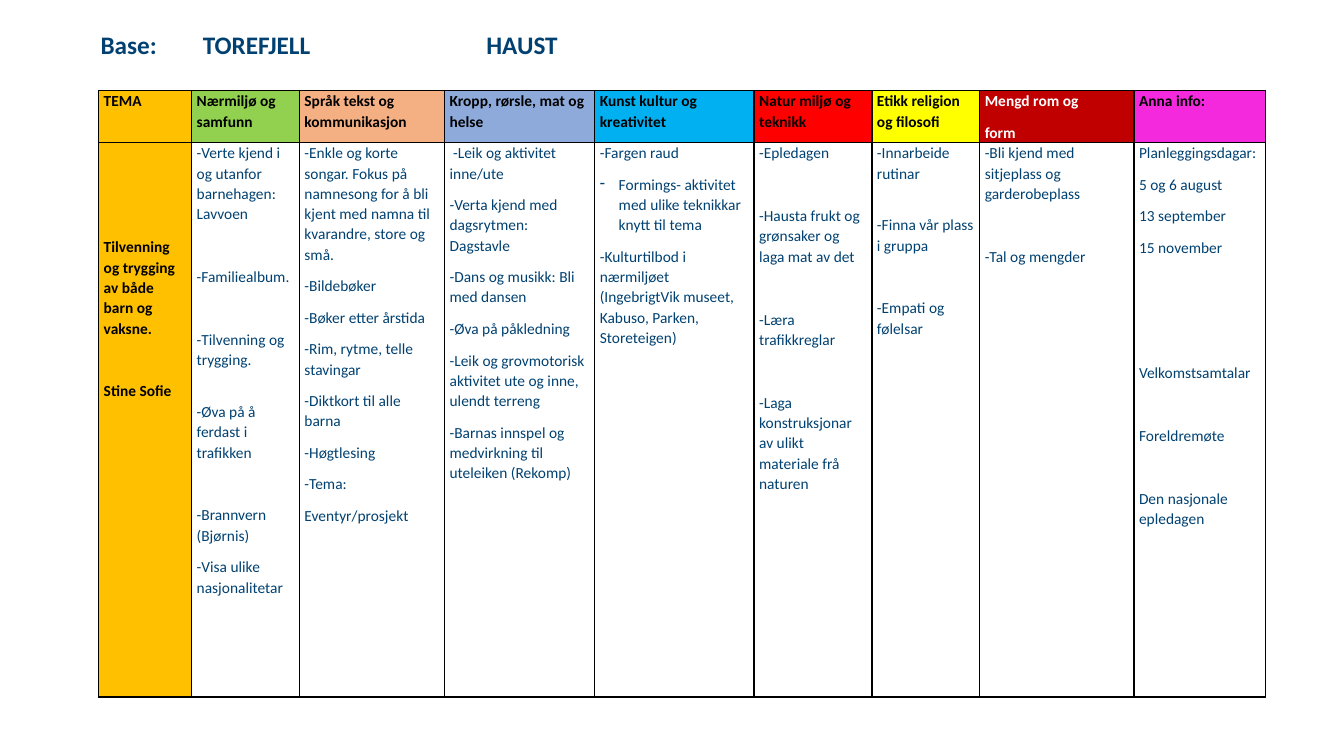
"""Build the autumn plan slide for the Torefjell base."""
from pptx import Presentation, util as u
from pptx.dml.color import RGBColor
from pptx.enum import text
from pptx.oxml.ns import qn
from lxml import etree

FONT = "Calibri"
NAVY = RGBColor(0x00, 0x41, 0x71)
BLACK = RGBColor(0x00, 0x00, 0x00)
WHITE = RGBColor(0xFF, 0xFF, 0xFF)
ORANGE = RGBColor(0xFF, 0xC0, 0x00)
GREEN = RGBColor(0x92, 0xD0, 0x50)
PEACH = RGBColor(0xF4, 0xB0, 0x83)
LAVENDER = RGBColor(0x8E, 0xAA, 0xDB)
BLUE = RGBColor(0x00, 0xB0, 0xF0)
RED = RGBColor(0xFF, 0x00, 0x00)
YELLOW = RGBColor(0xFF, 0xFF, 0x00)
DARK_RED = RGBColor(0xC0, 0x00, 0x00)
MAGENTA = RGBColor(0xF4, 0x28, 0xDC)

LINE = 14.4
GAP = LINE + 8
BULLET = "- "
ROW_HEIGHTS = (37, 396)

COLUMNS = [
    (66.4, ORANGE, ["TEMA"], [
        "Tilvenning og trygging av både barn og vaksne.",
        (GAP, "Stine Sofie")]),
    (77, GREEN, ["Nærmiljø og samfunn"], [
        "-Verte kjend i og utanfor barnehagen: Lavvoen",
        (GAP, "-Familiealbum."),
        (GAP, "-Tilvenning og trygging."),
        (LINE, "-Øva på å ferdast i trafikken"),
        (GAP, "-Brannvern (Bjørnis)"),
        "-Visa ulike nasjonalitetar"]),
    (103.7, PEACH, ["Språk tekst og kommunikasjon"], [
        "-Enkle og korte songar. Fokus på namnesong for å bli kjent med "
        "namna til kvarandre, store og små.",
        "-Bildebøker",
        "-Bøker etter årstida",
        "-Rim, rytme, telle stavingar",
        "-Diktkort til alle barna",
        "-Høgtlesing",
        "-Tema:",
        "Eventyr/prosjekt"]),
    (107.3, LAVENDER, ["Kropp, rørsle, mat og helse"], [
        " -Leik og aktivitet inne/ute",
        "-Verta kjend med dagsrytmen: Dagstavle",
        "-Dans og musikk: Bli med dansen",
        "-Øva på påkledning",
        "-Leik og grovmotorisk aktivitet ute og inne, ulendt terreng",
        "-Barnas innspel og medvirkning til uteleiken (Rekomp)"]),
    (113.8, BLUE, ["Kunst kultur og kreativitet"], [
        "-Fargen raud",
        BULLET + "Formings- aktivitet med ulike teknikkar knytt til tema",
        "-Kulturtilbod i nærmiljøet (IngebrigtVik museet, Kabuso, "
        "Parken, Storeteigen)"]),
    (84.2, RED, ["Natur miljø og teknikk"], [
        "-Epledagen",
        (GAP, "-Hausta frukt og grønsaker og laga mat av det"),
        (GAP, "-Læra trafikkreglar"),
        (GAP, "-Laga konstruksjonar av ulikt materiale frå naturen")]),
    (77, YELLOW, ["Etikk religion og filosofi"], [
        "-Innarbeide rutinar",
        (LINE, "-Finna vår plass i gruppa"),
        (GAP, "-Empati og følelsar")]),
    (110.2, DARK_RED, ["Mengd rom og", "form"], [
        "-Bli kjend med sitjeplass og garderobeplass",
        (GAP, "-Tal og mengder")]),
    (93.9, MAGENTA, ["Anna info:"], [
        "Planleggingsdagar:",
        "5 og 6 august",
        "13 september",
        "15 november",
        (3 * GAP, "Velkomstsamtalar"),
        (GAP, "Foreldremøte"),
        (GAP, "Den nasjonale epledagen")]),
]


def style_font(font, size, color, bold):
    """Apply the slide font with a size, colour and weight."""
    font.name = FONT
    font.size = u.Pt(size)
    font.color.rgb = color
    font.bold = bold


def add_borders(cell):
    """Draw a thin black line on every side of a cell."""
    properties = cell._tc.get_or_add_tcPr()
    for position, side in enumerate(("a:lnL", "a:lnR", "a:lnT", "a:lnB")):
        line = etree.Element(qn(side), w=str(u.Pt(1)))
        fill = etree.SubElement(line, qn("a:solidFill"))
        etree.SubElement(fill, qn("a:srgbClr"), val=str(BLACK))
        properties.insert(position, line)


def add_bullet(paragraph):
    """Give a paragraph a hanging dash bullet."""
    properties = paragraph._p.get_or_add_pPr()
    indent = u.Pt(13.5)
    properties.set("marL", str(indent))
    properties.set("indent", str(-indent))
    etree.SubElement(properties, qn("a:buChar"), char="-")


def fill_cell(cell, entries, fill, color, bold, top=0):
    """Write entries, each a text or a (space before, text) pair, in a cell."""
    cell.margin_left = cell.margin_right = u.Pt(3.6)
    cell.margin_top, cell.margin_bottom = u.Pt(top), 0
    if fill is None:
        cell.fill.background()
    else:
        cell.fill.solid()
        cell.fill.fore_color.rgb = fill
    add_borders(cell)
    frame = cell.text_frame
    for index, entry in enumerate(entries):
        space, words = entry if isinstance(entry, tuple) else (0, entry)
        paragraph = frame.add_paragraph() if index else frame.paragraphs[0]
        paragraph.text = words.removeprefix(BULLET)
        if words.startswith(BULLET):
            add_bullet(paragraph)
        paragraph.line_spacing = 1.07
        paragraph.space_before = u.Pt(space)
        paragraph.space_after = u.Pt(8)
        for run in paragraph.runs:
            style_font(run.font, 11, color, bold)


def add_title(slide, left, top, width, height):
    """Place the base name and season on one tabbed line."""
    box = slide.shapes.add_textbox(*map(u.Pt, (left, top, width, height)))
    frame = box.text_frame
    frame.word_wrap = True
    frame.vertical_anchor = text.MSO_ANCHOR.MIDDLE
    paragraph = frame.paragraphs[0]
    paragraph.text = "Base:\tTOREFJELL\tHAUST"
    tabs = etree.SubElement(paragraph._p.get_or_add_pPr(), qn("a:tabLst"))
    for stop in (73, 275.5):
        etree.SubElement(tabs, qn("a:tab"), pos=str(u.Pt(stop)), algn="l")
    for run in paragraph.runs:
        style_font(run.font, 18, NAVY, True)


def add_plan(slide, left, top):
    """Place the plan table with a theme column and subject columns."""
    width = sum(column[0] for column in COLUMNS)
    frame = slide.shapes.add_table(
        len(ROW_HEIGHTS), len(COLUMNS),
        *map(u.Pt, (left, top, width, sum(ROW_HEIGHTS))))
    table = frame.table
    table.first_row = table.horz_banding = False
    for row, height in zip(table.rows, ROW_HEIGHTS):
        row.height = u.Pt(height)
    for index, (width, fill, heading, entries) in enumerate(COLUMNS):
        table.columns[index].width = u.Pt(width)
        color = WHITE if fill == DARK_RED else BLACK
        fill_cell(table.cell(0, index), heading, fill, color, True)
        body = table.cell(1, index)
        if index == 0:
            fill_cell(body, entries, fill, BLACK, True, top=3 * GAP)
        else:
            fill_cell(body, entries, None, NAVY, False)


def main():
    """Create and save the presentation."""
    presentation = Presentation()
    presentation.slide_width = u.Pt(960)
    presentation.slide_height = u.Pt(540)
    slide = presentation.slides.add_slide(presentation.slide_layouts[6])
    add_plan(slide, 70.5, 64.8)
    add_title(slide, 64.8, 17.3, 860, 29)
    presentation.save("out.pptx")


if __name__ == "__main__":
    main()
